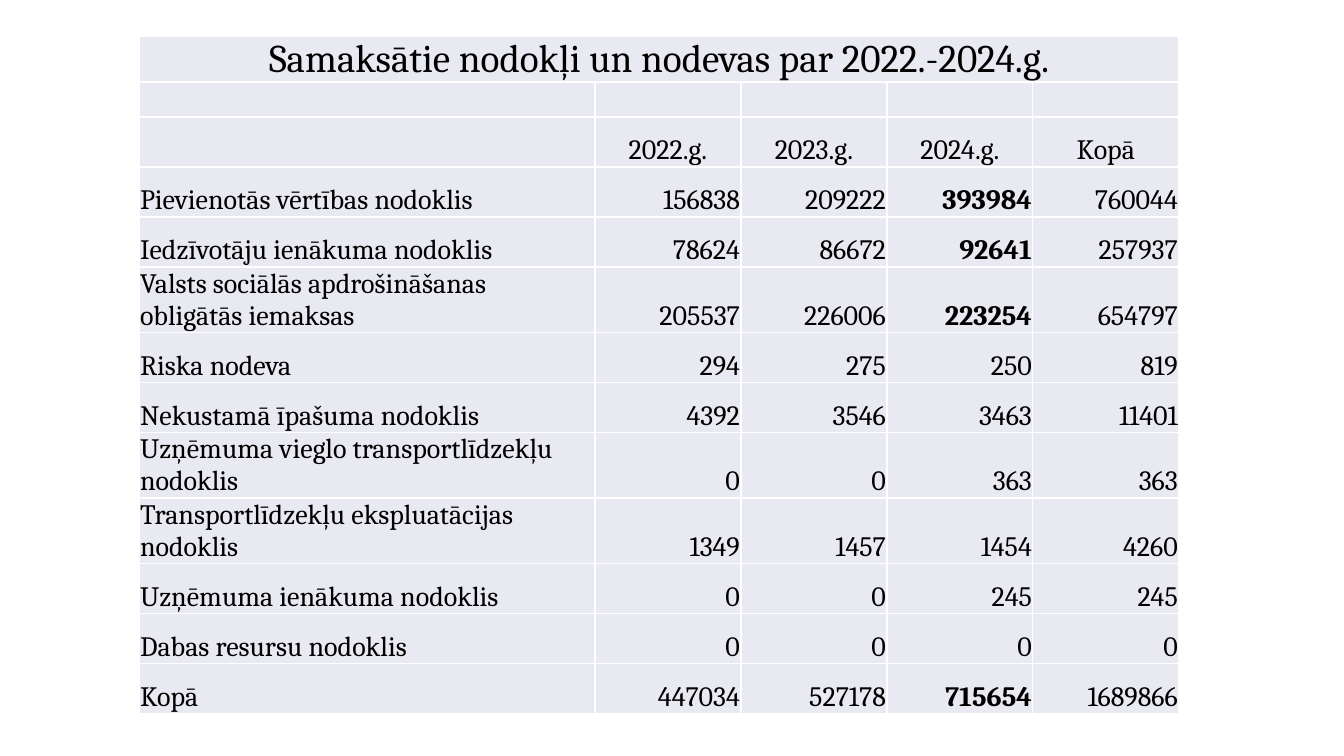
from pptx import Presentation
from pptx.dml.color import RGBColor
from pptx.enum.text import MSO_ANCHOR, PP_ALIGN
from pptx.util import Pt

PX = 914400 / 100.8
COLORS = {"cell": "E9EAF1", "text": "000000"}
FONT = "Cambria"


def px(length):
    return round(length * PX)


tax_rows = [
    ("Samaksātie nodokļi un nodevas par 2022.-2024.g.", "", "", "", ""),
    ("", "", "", "", ""),
    ("", "2022.g.", "2023.g.", "2024.g.", "Kopā"),
    ("Pievienotās vērtības nodoklis", "156838", "209222", "393984", "760044"),
    ("Iedzīvotāju ienākuma nodoklis", "78624", "86672", "92641", "257937"),
    ("Valsts sociālās apdrošināšanas obligātās iemaksas", "205537", "226006", "223254", "654797"),
    ("Riska nodeva", "294", "275", "250", "819"),
    ("Nekustamā īpašuma nodoklis", "4392", "3546", "3463", "11401"),
    ("Uzņēmuma vieglo transportlīdzekļu nodoklis", "0", "0", "363", "363"),
    ("Transportlīdzekļu ekspluatācijas nodoklis", "1349", "1457", "1454", "4260"),
    ("Uzņēmuma ienākuma nodoklis", "0", "0", "245", "245"),
    ("Dabas resursu nodoklis", "0", "0", "0", "0"),
    ("Kopā", "447034", "527178", "715654", "1689866"),
]
column_widths = [456] + [146] * 4
row_heights = [45, 35] + [65 if row in (5, 8, 9) else 50 for row in range(2, len(tax_rows))]
highlighted_rows = (3, 4, 5, 12)
year_2024 = 3

presentation = Presentation()
presentation.slide_width = px(1344)
presentation.slide_height = px(756)
slide = presentation.slides.add_slide(presentation.slide_layouts[6])

taxes = slide.shapes.add_table(
    len(tax_rows), len(column_widths),
    px(139), px(36), px(sum(column_widths)), px(sum(row_heights)),
).table
taxes.first_row = False
taxes.horz_banding = False
for column, width in zip(taxes.columns, column_widths):
    column.width = px(width)
for row, height in zip(taxes.rows, row_heights):
    row.height = px(height)
taxes.cell(0, 0).merge(taxes.cell(0, len(column_widths) - 1))

for row, entries in enumerate(tax_rows):
    for column, entry in enumerate(entries):
        cell = taxes.cell(row, column)
        cell.fill.solid()
        cell.fill.fore_color.rgb = RGBColor.from_string(COLORS["cell"])
        cell.margin_left = cell.margin_right = cell.margin_top = px(1)
        cell.margin_bottom = 0
        cell.vertical_anchor = MSO_ANCHOR.BOTTOM
        if not entry:
            continue
        cell.text = entry
        paragraph = cell.text_frame.paragraphs[0]
        if row < 3:
            paragraph.alignment = PP_ALIGN.CENTER
        else:
            paragraph.alignment = PP_ALIGN.RIGHT if column else PP_ALIGN.LEFT
        paragraph.font.name = FONT
        paragraph.font.size = Pt(28 if row == 0 else 20)
        paragraph.font.bold = column == year_2024 and row in highlighted_rows
        paragraph.font.color.rgb = RGBColor.from_string(COLORS["text"])

presentation.save("out.pptx")
